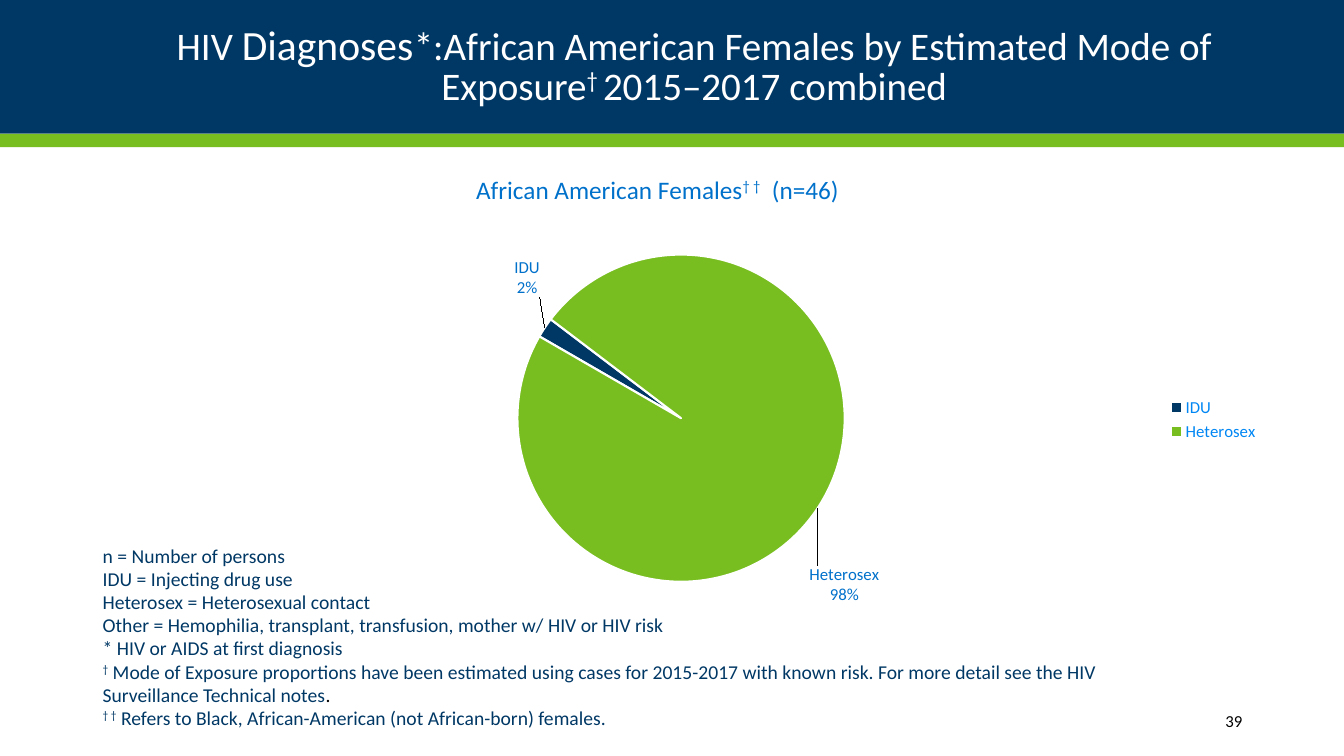
import pptx
import pptx.chart.data
import pptx.dml.color
import pptx.enum.chart
import pptx.enum.shapes
import pptx.enum.text
import pptx.oxml
import pptx.oxml.ns
import pptx.util

W, H = 13.33, 7.5
FONT = "Calibri"
COLORS = {
    "navy": "003865",
    "green": "78BE21",
    "white": "FFFFFF",
    "black": "000000",
    "blue": "0071CB",
    "legend": "0087F4",
}
NOTES = [
    [("n = Number of persons", {})],
    [("IDU = Injecting drug use", {})],
    [("Heterosex = Heterosexual contact", {})],
    [("Other = Hemophilia, transplant, transfusion, mother w/ HIV or HIV risk", {})],
    [("* HIV or AIDS at first diagnosis", {})],
    [
        ("†", {"raised": True}),
        (" Mode of Exposure proportions have been estimated using cases for 2015-2017 "
         "with known risk. For more detail see the HIV Surveillance Technical notes", {}),
        (".", {"color": "black"}),
    ],
    [
        ("† †", {"raised": True}),
        (" Refers to Black, African-American (not African-born) females.", {}),
    ],
]
EXPOSURES = [
    ("IDU", 2, "navy", (0, -0.05)),
    ("Heterosex", 98, "green", (-0.01, 0.1)),
]


def rgb(name):
    return pptx.dml.color.RGBColor.from_string(COLORS[name])


def inches(box):
    return [pptx.util.Inches(v) for v in box]


def style(font, size, color):
    font.name = FONT
    font.size = pptx.util.Pt(size)
    font.bold = False
    font.color.rgb = rgb(color)


def add_text(p, text, size=14, color="navy", raised=False):
    r = p.add_run()
    r.text = text
    style(r.font, size, color)
    if raised:
        r._r.get_or_add_rPr().set("baseline", "30000")


def set_layout(parent, index, **values):
    for old in parent.findall(pptx.oxml.ns.qn("c:layout")):
        parent.remove(old)
    parts = "".join(f'<c:{k} val="{v}"/>' for k, v in values.items())
    parent.insert(index, pptx.oxml.parse_xml(
        f'<c:layout {pptx.oxml.ns.nsdecls("c")}>'
        f"<c:manualLayout>{parts}</c:manualLayout></c:layout>"))


def add_banner(slide, box):
    x, y, w, h = box
    bands = [(y, h / 1.1, "navy"), (y + h / 1.1, h / 11, "green")]
    for i, (top, height, color) in enumerate(bands):
        sp = slide.shapes.add_shape(
            pptx.enum.shapes.MSO_SHAPE.RECTANGLE, *inches((x, top, w, height)))
        sp.shadow.inherit = False
        sp.fill.solid()
        sp.fill.fore_color.rgb = rgb(color)
        sp.line.fill.background()
        slide.shapes._spTree.insert(2 + i, sp._element)


def add_title(slide, box):
    sp = slide.shapes.title
    sp.left, sp.top, sp.width, sp.height = inches(box)
    tf = sp.text_frame
    tf.word_wrap = True
    tf.auto_size = pptx.enum.text.MSO_AUTO_SIZE.NONE
    tf.vertical_anchor = pptx.enum.text.MSO_ANCHOR.MIDDLE
    p = tf.paragraphs[0]
    p.alignment = pptx.enum.text.PP_ALIGN.CENTER
    p.line_spacing = 0.85
    for text, size, raised in [
        ("HIV ", 27.9, False),
        ("Diagnoses", 29.7, False),
        ("*:African American Females by Estimated Mode of Exposure", 27.9, False),
        ("† ", 27.9, True),
        ("2015–2017 combined", 27.9, False),
    ]:
        add_text(p, text, size=size, color="white", raised=raised)


def add_notes(slide, box):
    tf = slide.shapes.add_textbox(*inches(box)).text_frame
    tf.word_wrap = True
    tf.margin_top = tf.margin_bottom = 0
    for i, runs in enumerate(NOTES):
        p = tf.add_paragraph() if i else tf.paragraphs[0]
        p.line_spacing = 0.98
        for text, fmt in runs:
            add_text(p, text, **fmt)


def add_page_number(slide, box):
    tf = slide.shapes.add_textbox(*inches(box)).text_frame
    tf.word_wrap = True
    tf.vertical_anchor = pptx.enum.text.MSO_ANCHOR.MIDDLE
    p = tf.paragraphs[0]
    p.alignment = pptx.enum.text.PP_ALIGN.RIGHT
    add_text(p, "39", size=12, color="black")


def add_labels(series):
    outside = pptx.enum.chart.XL_LABEL_POSITION.OUTSIDE_END
    labels = series.data_labels
    labels.show_value = False
    labels.show_category_name = labels.show_percentage = True
    labels.number_format = "0%"
    labels.number_format_is_linked = False
    labels.position = outside
    style(labels.font, 12, "blue")
    for i, (_, _, color, (dx, dy)) in enumerate(EXPOSURES):
        point = series.points[i]
        point.format.fill.solid()
        point.format.fill.fore_color.rgb = rgb(color)
        point.format.line.color.rgb = rgb("white")
        point.format.line.width = pptx.util.Pt(1.5)
        style(point.data_label.font, 12, "blue")
        point.data_label.position = outside
        el = series._element.xpath("c:dLbls/c:dLbl")[i]
        set_layout(el, 1, x=dx, y=dy)
        for tag, val in [("showVal", "0"), ("showCatName", "1"), ("showPercent", "1")]:
            el.find(pptx.oxml.ns.qn(f"c:{tag}")).set("val", val)
        el.append(pptx.oxml.parse_xml(
            f'<c:separator {pptx.oxml.ns.nsdecls("c")}>\n</c:separator>'))


def add_pie(slide, box):
    data = pptx.chart.data.CategoryChartData()
    data.categories = [e[0] for e in EXPOSURES]
    data.add_series("Series 1", [e[1] for e in EXPOSURES])
    chart = slide.shapes.add_chart(
        pptx.enum.chart.XL_CHART_TYPE.PIE, *inches(box), data).chart
    style(chart.font, 10, "navy")

    chart.has_title = True
    p = chart.chart_title.text_frame.paragraphs[0]
    for text, raised in [("African American Females", False), ("† †", True), ("  (n=46)", False)]:
        add_text(p, text, size=18, color="blue", raised=raised)
    set_layout(chart.chart_title._element, 1, xMode="edge", yMode="edge", x=0.38, y=0.03)

    chart.has_legend = True
    chart.legend.position = pptx.enum.chart.XL_LEGEND_POSITION.RIGHT
    chart.legend.include_in_layout = False
    style(chart.legend.font, 12, "legend")

    plot = chart.plots[0]
    plot.vary_by_categories = True
    add_labels(plot.series[0])
    pie = plot._element
    for old in pie.findall(pptx.oxml.ns.qn("c:firstSliceAng")):
        pie.remove(old)
    pie.append(pptx.oxml.parse_xml(
        f'<c:firstSliceAng {pptx.oxml.ns.nsdecls("c")} val="300"/>'))
    set_layout(pie.getparent(), 0, layoutTarget="inner", xMode="edge", yMode="edge",
               x=0.245, y=0.189, w=0.594, h=0.616)


def main():
    prs = pptx.Presentation()
    prs.slide_width, prs.slide_height = inches((W, H))
    slide = prs.slides.add_slide(prs.slide_layouts[5])
    add_banner(slide, (0, 0, W, 1.46))
    add_title(slide, (0.92, 0.17, 11.93, 1))
    add_notes(slide, (0.92, 5.41, 10.87, 1.94))
    add_page_number(slide, (10.82, 6.95, 1.6, 0.4))
    add_pie(slide, (-0.15, 1.53, 12.74, 5.27))
    prs.save("out.pptx")


if __name__ == "__main__":
    main()
